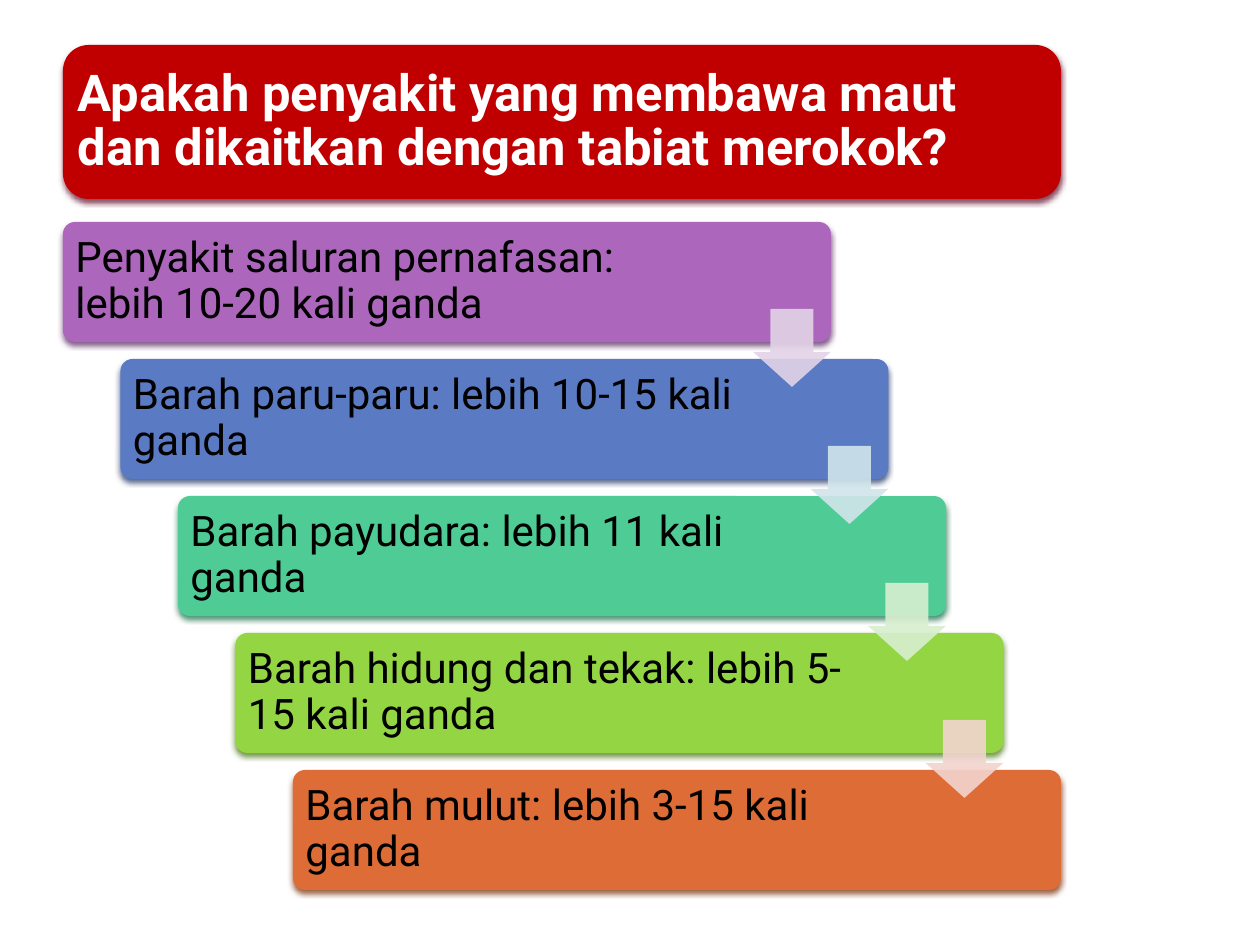
from lxml import etree
from pptx import Presentation
from pptx import util as u
from pptx.dml.color import RGBColor
from pptx.enum import shapes, text
from pptx.oxml import parse_xml
from pptx.oxml.ns import nsdecls, qn

PX = u.Inches(1) / 126
FONT = "Roboto"
WHITE = RGBColor(0xFF, 0xFF, 0xFF)
BLACK = RGBColor(0x00, 0x00, 0x00)
RED = RGBColor(0xC0, 0x00, 0x00)
RED_SHADOW = RGBColor(0x72, 0x26, 0x40)
PURPLE = RGBColor(0xAC, 0x66, 0xBB)
BLUE = RGBColor(0x5A, 0x7A, 0xC3)
TEAL = RGBColor(0x4F, 0xCC, 0x96)
GREEN = RGBColor(0x93, 0xD5, 0x42)
ORANGE = RGBColor(0xDE, 0x6C, 0x36)
ARROW_COLORS = [
    RGBColor(0xE3, 0xD3, 0xE7),
    RGBColor(0xD1, 0xE5, 0xEB),
    RGBColor(0xD8, 0xEF, 0xCF),
    RGBColor(0xF2, 0xD4, 0xCE),
]

TITLE = "Apakah penyakit yang membawa maut dan dikaitkan dengan tabiat merokok?"
DISEASES = [
    ("Penyakit saluran pernafasan: lebih 10-20 kali ganda", PURPLE),
    ("Barah paru-paru: lebih 10-15 kali ganda", BLUE),
    ("Barah payudara: lebih 11 kali ganda", TEAL),
    ("Barah hidung dan tekak: lebih 5-15 kali ganda", GREEN),
    ("Barah mulut: lebih 3-15 kali ganda", ORANGE),
]


def px(length):
    return u.Emu(round(length * PX))


def apply_format(target, values):
    for name, value in values.items():
        setattr(target, name, value)


def darker(color, share=0.617):
    return RGBColor(*(round(channel * share) for channel in color))


def add_filled_shape(slide, kind, box, color, adjustments=()):
    shape = slide.shapes.add_shape(kind, *map(px, box))
    for index, value in enumerate(adjustments):
        shape.adjustments[index] = value
    shape.fill.solid()
    shape.fill.fore_color.rgb = color
    shape.line.fill.background()
    shape.shadow.inherit = False
    return shape


def set_soft_shadow(shape, color):
    effects = shape._element.spPr.find(qn("a:effectLst"))
    effects.append(parse_xml(
        f'<a:outerShdw {nsdecls("a")} blurRad="{u.Pt(3.1)}" dist="{u.Pt(2)}" '
        f'dir="5400000" algn="ctr" rotWithShape="0"><a:srgbClr val="{color}">'
        '<a:alpha val="83000"/></a:srgbClr></a:outerShdw>'))


def write_text(shape, wording, insets, font):
    """Fill the shape with one left-aligned paragraph; insets run left, top, right, bottom."""
    frame = shape.text_frame
    frame.text = wording
    sides = ("margin_left", "margin_top", "margin_right", "margin_bottom")
    apply_format(frame, dict(zip(sides, map(px, insets))))
    apply_format(frame, {"word_wrap": True, "auto_size": text.MSO_AUTO_SIZE.NONE,
                         "vertical_anchor": text.MSO_ANCHOR.MIDDLE})
    paragraph = frame.paragraphs[0]
    apply_format(paragraph, {"alignment": text.PP_ALIGN.LEFT, "line_spacing": 0.9})
    run = paragraph.runs[0]
    color = font["color"]
    apply_format(run.font, {"name": FONT, "size": u.Pt(font["size"]), "bold": font["bold"]})
    run.font.color.rgb = color


def add_heading(slide, box):
    panel = add_filled_shape(slide, shapes.MSO_SHAPE.ROUNDED_RECTANGLE, box, RED)
    set_soft_shadow(panel, RED_SHADOW)
    title = slide.shapes.title
    apply_format(title, dict(zip(("left", "top", "width", "height"), map(px, box))))
    write_text(title, TITLE, (15, 15, 15, 15), {"size": 29, "bold": True, "color": WHITE})
    title._element.addprevious(panel._element)


def add_staircase(slide, box):
    """Step the disease bars diagonally across the box, with an arrow at each step."""
    left, top, width, height = box
    bar_width, bar_height = 768, 120
    arrow_size, arrow_drop = 78, 87
    steps = len(DISEASES) - 1
    step_x = (width - bar_width) / steps
    step_y = (height - bar_height) / steps
    corners = [(left + i * step_x, top + i * step_y) for i in range(len(DISEASES))]

    for (x, y), (wording, color) in zip(corners, DISEASES):
        bar = add_filled_shape(slide, shapes.MSO_SHAPE.ROUNDED_RECTANGLE,
                               (x, y, bar_width, bar_height), color, [0.1])
        set_soft_shadow(bar, darker(color))
        write_text(bar, wording, (9, 9, 145, 9), {"size": 24, "bold": False, "color": BLACK})

    for (x, y), color in zip(corners, ARROW_COLORS):
        arrow_box = (x + bar_width - arrow_size, y + arrow_drop, arrow_size, arrow_size)
        arrow = add_filled_shape(slide, shapes.MSO_SHAPE.DOWN_ARROW, arrow_box,
                                 color, [0.55, 0.45])
        fill_color = arrow._element.spPr.find(qn("a:solidFill"))[0]
        etree.SubElement(fill_color, qn("a:alpha")).set("val", "90000")


def main():
    presentation = Presentation()
    apply_format(presentation, {"slide_width": px(1260), "slide_height": px(945)})
    slide = presentation.slides.add_slide(presentation.slide_layouts[5])
    add_heading(slide, (63, 45, 998, 154))
    add_staircase(slide, (63, 222, 998, 668))
    presentation.save("out.pptx")


if __name__ == "__main__":
    main()
